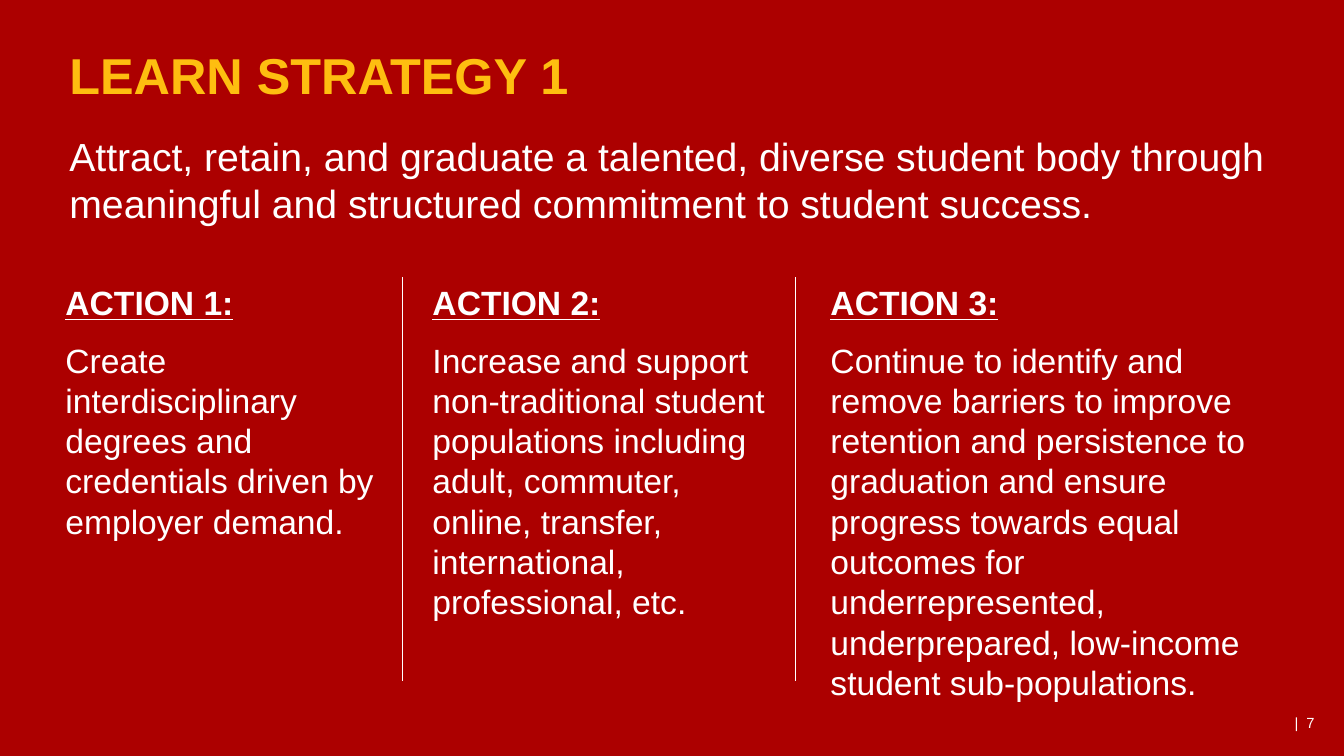
from dataclasses import dataclass

from lxml.etree import SubElement
from pptx import Presentation
from pptx.dml.color import RGBColor
from pptx.enum.shapes import MSO_CONNECTOR as Connector
from pptx.enum.text import MSO_ANCHOR as Anchor, MSO_AUTO_SIZE as AutoSize, PP_ALIGN as Align
from pptx.oxml.ns import qn
from pptx.util import Cm, Pt


@dataclass(frozen=True)
class Theme:
    font: str = "Arial"
    red: RGBColor = RGBColor(0xAC, 0x00, 0x00)
    gold: RGBColor = RGBColor(0xFE, 0xBE, 0x10)
    white: RGBColor = RGBColor(0xFF, 0xFF, 0xFF)
    title_size: float = 36
    summary_size: float = 28
    action_size: float = 24
    number_size: float = 10.5


theme = Theme()
COLUMN_TOP = 6.99
DIVIDER_BOTTOM = 17.15

deck = Presentation()
deck.slide_width = Cm(33.87)
deck.slide_height = Cm(19.05)
page = deck.slides.add_slide(deck.slide_layouts[6])
page.background.fill.solid()
page.background.fill.fore_color.rgb = theme.red


def add_text(text, left, top, width, height, size, color=theme.white):
    """Add a wrapping text box, one paragraph per line, and return its frame."""
    box = page.shapes.add_textbox(Cm(left), Cm(top), Cm(width), Cm(height))
    frame = box.text_frame
    frame.word_wrap = True
    frame.text = text
    for para in frame.paragraphs:
        for span in para.runs:
            span.font.name = theme.font
            span.font.size = Pt(size)
            span.font.color.rgb = color
    return frame


title = add_text("LEARN STRATEGY 1", 1.5, 0.56, 22.86, 2.21, theme.title_size, theme.gold)
title.vertical_anchor = Anchor.BOTTOM
title.paragraphs[0].runs[0].font.bold = True

number = add_text("|  7", 25.76, 17.7, 7.62, 1.02, theme.number_size)
number.vertical_anchor = Anchor.MIDDLE
number.paragraphs[0].alignment = Align.RIGHT

summary = add_text(
    "Attract, retain, and graduate a talented, diverse student body through "
    "meaningful and structured commitment to student success.",
    1.5, 3.2, 30.89, 2.64, theme.summary_size)
summary.auto_size = AutoSize.SHAPE_TO_FIT_TEXT

# left, width, height, text
actions = [
    (1.65, 8.59, 7.87,
     "Create interdisciplinary degrees and credentials driven by employer demand."),
    (10.9, 9.04, 9.91,
     "Increase and support non-traditional student populations including adult, "
     "commuter, online, transfer, international, professional, etc."),
    (20.93, 11, 11.96,
     "Continue to identify and remove barriers to improve retention and persistence "
     "to graduation and ensure progress towards equal outcomes for underrepresented, "
     "underprepared, low-income student sub-populations."),
]
for index, (left, width, height, text) in enumerate(actions, start=1):
    action = add_text(f"ACTION {index}:\n{text}", left, COLUMN_TOP, width, height,
                      theme.action_size)
    action.margin_left = 0
    action.auto_size = AutoSize.SHAPE_TO_FIT_TEXT
    heading = action.paragraphs[0]
    heading.space_after = Pt(12)
    heading.runs[0].font.bold = True
    heading.runs[0].font.underline = True

for x in (10.13, 20.04):
    divider = page.shapes.add_connector(
        Connector.STRAIGHT, Cm(x), Cm(COLUMN_TOP), Cm(x), Cm(DIVIDER_BOTTOM))
    divider.line.color.rgb = theme.white
    divider.line.width = Pt(0.5)
    SubElement(divider._element.spPr, qn("a:effectLst"))

deck.save("out.pptx")
